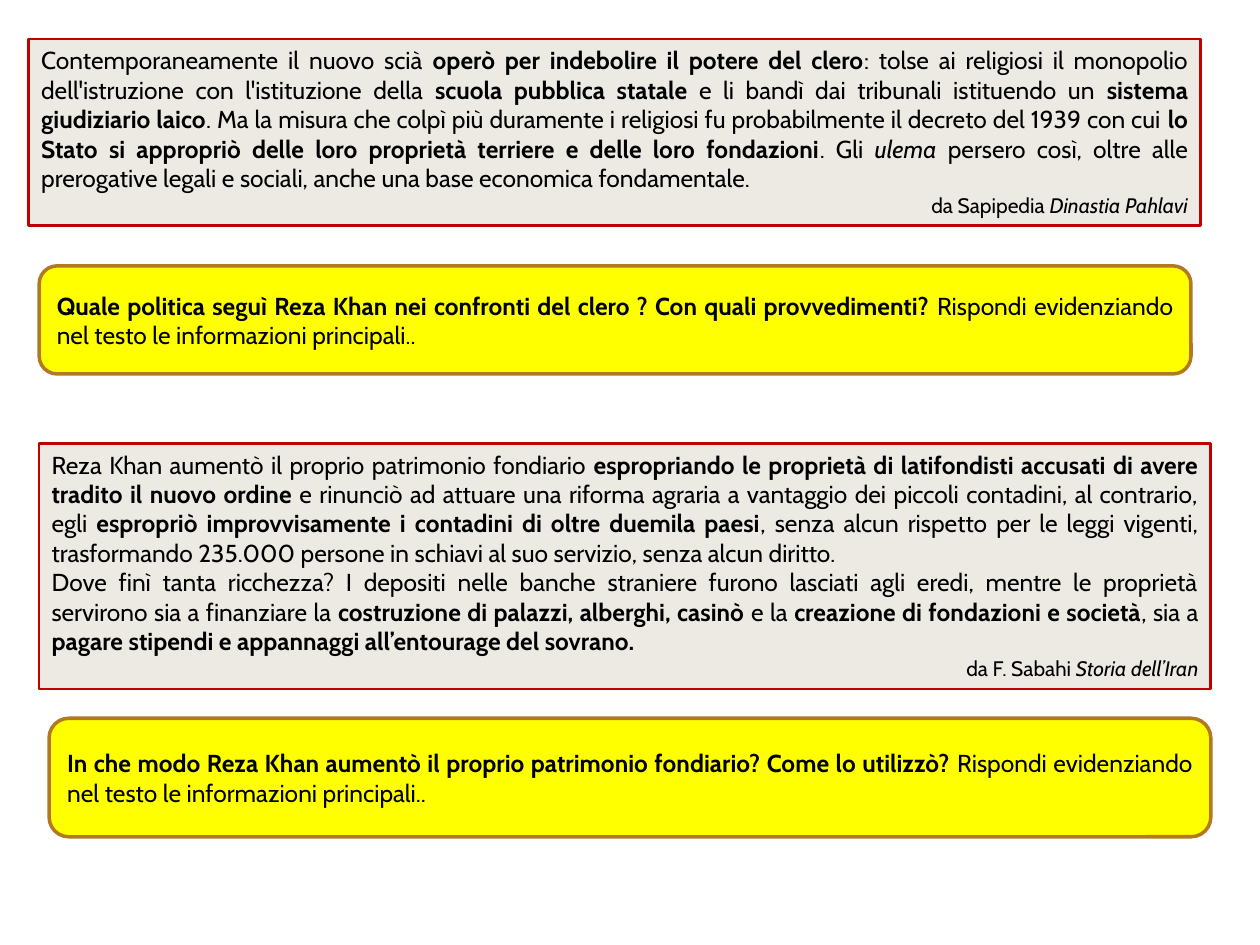
from dataclasses import dataclass
from itertools import cycle

from pptx import Presentation
from pptx.dml.color import RGBColor
from pptx.enum.shapes import MSO_SHAPE
from pptx.enum.text import MSO_ANCHOR, PP_ALIGN
from pptx.slide import Slide
from pptx.text.text import TextFrame
from pptx.util import Cm, Pt


@dataclass(frozen=True)
class Style:
    form: MSO_SHAPE
    fill: str
    edge: str
    width: float
    anchor: MSO_ANCHOR


@dataclass(frozen=True)
class Box:
    style: Style
    left: float
    top: float
    width: float
    height: float
    body: tuple[str, ...]
    credit: tuple[str, str] | None = None


PASSAGE = Style(MSO_SHAPE.RECTANGLE, "ECEAE3", "C00000", 1.5, MSO_ANCHOR.TOP)
QUESTION = Style(MSO_SHAPE.ROUNDED_RECTANGLE, "FFFF00", "B27822", 2, MSO_ANCHOR.MIDDLE)
TASK = "Rispondi evidenziando nel testo le informazioni principali.."

# In body text, *stars* mark bold and |bars| mark italic.
BOXES = (
    Box(PASSAGE, 0.58, 0.79, 23.62, 3.76, (
        "Contemporaneamente il nuovo scià *operò per indebolire il potere del clero*: "
        "tolse ai religiosi il monopolio dell'istruzione con l'istituzione della "
        "*scuola pubblica statale* e li bandì dai tribunali istituendo un "
        "*sistema giudiziario laico*. Ma la misura che colpì più duramente i religiosi "
        "fu probabilmente il decreto del 1939 con cui *lo Stato si appropriò delle loro "
        "proprietà terriere e delle loro fondazioni*. Gli |ulema |persero così, oltre "
        "alle prerogative legali e sociali, anche una base economica fondamentale.",
    ), ("da Sapipedia ", "Dinastia Pahlavi")),
    Box(QUESTION, 0.79, 5.36, 23.22, 2.18, (
        "*Quale politica seguì Reza Khan nei confronti del clero ? "
        f"Con quali provvedimenti? *{TASK}",
    )),
    Box(PASSAGE, 0.79, 8.94, 23.62, 4.95, (
        "Reza Khan aumentò il proprio patrimonio fondiario *espropriando le proprietà "
        "di latifondisti accusati di avere tradito il nuovo ordine *e rinunciò ad "
        "attuare una riforma agraria a vantaggio dei piccoli contadini, al contrario, "
        "egli *espropriò improvvisamente i contadini di oltre duemila paesi*, senza "
        "alcun rispetto per le leggi vigenti, trasformando 235.000 persone in schiavi "
        "al suo servizio, senza alcun diritto.",
        "Dove finì tanta ricchezza? I depositi nelle banche straniere furono lasciati "
        "agli eredi, mentre le proprietà servirono sia a finanziare la *costruzione di "
        "palazzi, alberghi, casinò *e la *creazione di fondazioni e società*, sia a "
        "*pagare stipendi e appannaggi all’entourage del sovrano.*",
    ), ("da F. Sabahi ", "Storia dell’Iran")),
    Box(QUESTION, 0.99, 14.48, 23.42, 2.39, (
        "*In che modo Reza Khan aumentò il proprio patrimonio fondiario? "
        f"Come lo utilizzò? *{TASK}",
    )),
)


def color(code: str) -> RGBColor:
    return RGBColor.from_string(code)


def add_text(frame: TextFrame, text: str, size: int, align: PP_ALIGN) -> None:
    """Fill the first paragraph if it is empty, else append one."""
    para = frame.paragraphs[0] if not frame.text else frame.add_paragraph()
    para.alignment = align
    para.font.name = "Cabin"
    para.font.size = Pt(size)
    para.font.color.rgb = color("000000")
    for part, bold in zip(text.split("*"), cycle((False, True))):
        for piece, slant in zip(part.split("|"), cycle((False, True))):
            if piece:
                run = para.add_run()
                run.text = piece
                if bold:
                    run.font.bold = True
                if slant:
                    run.font.italic = True


def draw_box(slide: Slide, box: Box) -> None:
    style = box.style
    shape = slide.shapes.add_shape(
        style.form, Cm(box.left), Cm(box.top), Cm(box.width), Cm(box.height)
    )
    shape.shadow.inherit = False
    shape.fill.solid()
    shape.fill.fore_color.rgb = color(style.fill)
    shape.line.color.rgb = color(style.edge)
    shape.line.width = Pt(style.width)
    frame = shape.text_frame
    frame.word_wrap = True
    frame.vertical_anchor = style.anchor
    for text in box.body:
        add_text(frame, text, 14, PP_ALIGN.JUSTIFY)
    if box.credit:
        source, title = box.credit
        add_text(frame, f"{source}|{title}|", 12, PP_ALIGN.RIGHT)


def main() -> None:
    deck = Presentation()
    deck.slide_width, deck.slide_height = Cm(25.4), Cm(19.05)
    slide = deck.slides.add_slide(deck.slide_layouts[6])
    for box in BOXES:
        draw_box(slide, box)
    deck.save("out.pptx")


if __name__ == "__main__":
    main()
